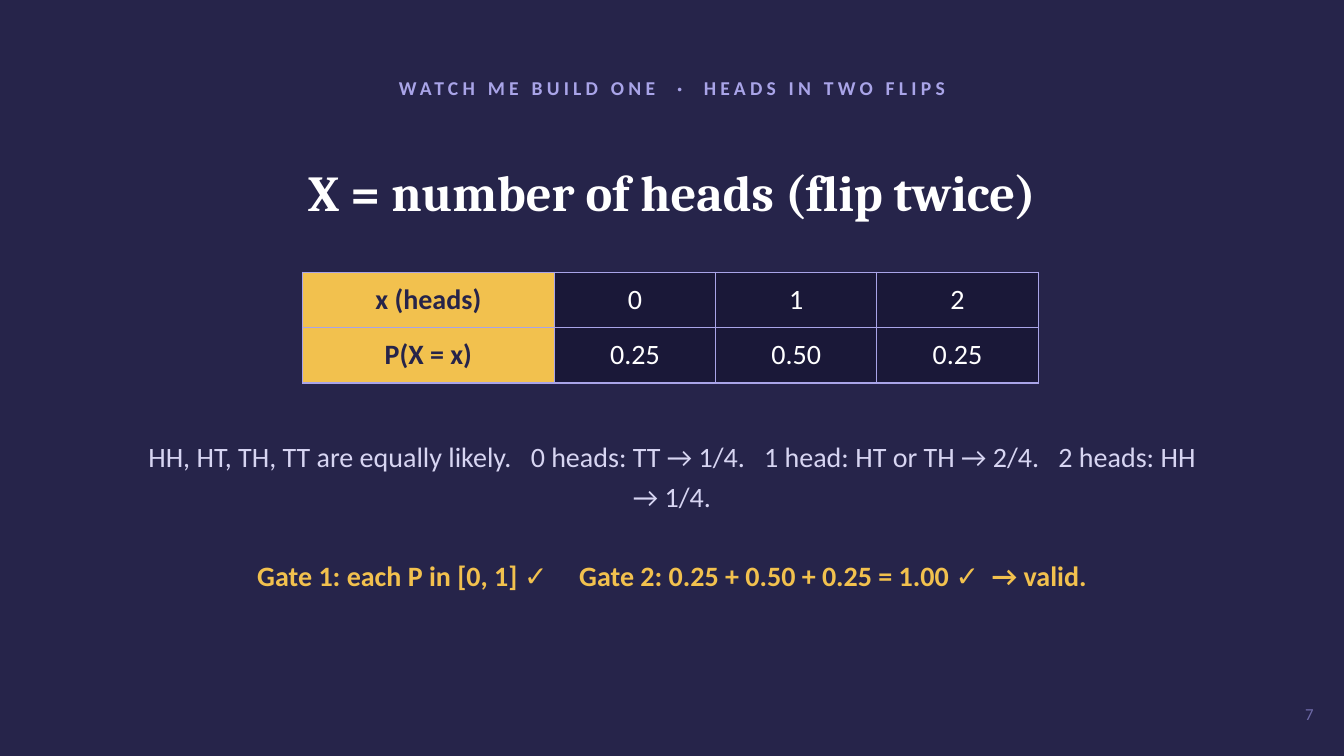
"""Build the slide that tabulates the number of heads in two coin flips."""
from dataclasses import dataclass

from lxml.etree import SubElement
from pptx import Presentation
from pptx.dml.color import RGBColor as RGB
from pptx.enum.text import MSO_ANCHOR as Anchor, PP_ALIGN as Align
from pptx.oxml.ns import qn
from pptx.util import Inches, Pt


@dataclass(frozen=True)
class Theme:
    """Colours, fonts and type sizes."""
    ground: str = "26244A"
    cell: str = "1A1838"
    lilac: str = "A9A4E8"
    pale: str = "D7D5F2"
    gold: str = "F2C14E"
    white: str = "FFFFFF"
    muted: str = "6E6AA8"
    sans: str = "Calibri"
    serif: str = "Cambria"
    title: int = 36
    body: int = 20
    kicker: int = 14
    small: int = 12


class Deck:
    """Draw elements on a grid of 40 columns by 30 rows."""

    def __init__(self, theme):
        """Open a deck of one blank slide."""
        self.t = theme
        self.prs = Presentation()
        self.prs.slide_width, self.prs.slide_height = Inches(13.333), Inches(7.5)
        self.s = self.prs.slides.add_slide(self.prs.slide_layouts[6])
        fill = self.s.background.fill
        fill.solid()
        fill.fore_color.rgb = RGB.from_string(theme.ground)

    def cols(self, n):
        """Return the width of n columns."""
        return round(self.prs.slide_width * n / 40)

    def rows(self, n):
        """Return the height of n rows."""
        return round(self.prs.slide_height * n / 30)

    def style(self, p, size, color, bold=False, font=None, align=Align.CENTER, spacing=0):
        """Format a paragraph and its runs."""
        p.alignment = align
        for r in p.runs:
            f = r.font
            f.size, f.bold, f.name = Pt(size), bold, font or self.t.sans
            f.color.rgb = RGB.from_string(color)
            if spacing:
                f._element.set("spc", str(round(spacing * 100)))

    def box(self, x, y, w, h, anchor=Anchor.MIDDLE):
        """Add an empty wrapping text box without margins."""
        shape = self.s.shapes.add_textbox(
            self.cols(x), self.rows(y), self.cols(w), self.rows(h))
        tf = shape.text_frame
        tf.word_wrap, tf.vertical_anchor = True, anchor
        tf.margin_left = tf.margin_right = tf.margin_top = tf.margin_bottom = 0
        return tf

    def text(self, place, words, size, color, **look):
        """Add a one-line text box."""
        tf = self.box(*place)
        tf.text = words
        self.style(tf.paragraphs[0], size, color, **look)
        return tf.paragraphs[0]

    def gapped(self, p, pieces, size, color, gaps, bold=False, spacing=0):
        """Write pieces parted by single spaces widened by the gaps in points."""
        for piece, gap in zip(pieces, [*gaps, None]):
            p.add_run().text = piece
            if gap is not None:
                p.add_run().text = " "
        self.style(p, size, color, bold, spacing=spacing)
        for r, gap in zip(p.runs[1::2], gaps):
            r.font._element.set("spc", str(round(gap * 100)))

    def table(self, x, y, data, widths, height):
        """Add a bordered table whose first column is highlighted."""
        tbl = self.s.shapes.add_table(
            len(data), len(widths), self.cols(x), self.rows(y),
            self.cols(sum(widths)), self.rows(height * len(data))).table
        tbl.first_row = tbl.horz_banding = False
        for col, width in zip(tbl.columns, widths):
            col.width = self.cols(width)
        for i, values in enumerate(data):
            tbl.rows[i].height = self.rows(height)
            for j, value in enumerate(values):
                self.cell(tbl.cell(i, j), value, head=j == 0)

    def cell(self, cell, value, head):
        """Fill, border and label one cell."""
        t = self.t
        cell.text, cell.vertical_anchor = value, Anchor.MIDDLE
        self.style(cell.text_frame.paragraphs[0], t.body,
                   t.ground if head else t.white, head)
        pr = cell._tc.get_or_add_tcPr()
        for side in ("a:lnL", "a:lnR", "a:lnT", "a:lnB"):
            ln = SubElement(pr, qn(side), w=str(Pt(1)))
            SubElement(SubElement(ln, qn("a:solidFill")), qn("a:srgbClr"), val=t.lilac)
        cell.fill.solid()
        cell.fill.fore_color.rgb = RGB.from_string(t.gold if head else t.cell)


def main():
    """Build and save the slide."""
    t = Theme()
    d = Deck(t)
    kicker = d.box(2.7, 2.48, 34.6, 2).paragraphs[0]
    d.gapped(kicker, ["WATCH ME BUILD ONE", "·", "HEADS IN TWO FLIPS"],
             t.kicker, t.lilac, [9.2, 9.2], bold=True, spacing=3)
    d.text((1.8, 5.6, 36.4, 4), "X = number of heads (flip twice)",
           t.title, t.white, bold=True, font=t.serif)
    d.table(9, 10.8, [["x (heads)", "0", "1", "2"],
                      ["P(X = x)", "0.25", "0.50", "0.25"]],
            [7.5, 4.8, 4.8, 4.8], 2.2)

    tf = d.box(4.2, 17.2, 31.6, 8, Anchor.TOP)
    reasons, gates = tf.paragraphs[0], tf.add_paragraph()
    d.gapped(reasons, ["HH, HT, TH, TT are equally likely.", "0 heads: TT → 1/4.",
                       "1 head: HT or TH → 2/4.", "2 heads: HH → 1/4."],
             t.body, t.pale, [9, 9, 9])
    d.gapped(gates, ["Gate 1: each P in [0, 1] ✓",
                     "Gate 2: 0.25 + 0.50 + 0.25 = 1.00 ✓", "→ valid."],
             t.body, t.gold, [18, 4.5], bold=True)
    reasons.line_spacing = gates.line_spacing = 1.18
    gates.space_before = Pt(28.5)

    d.text((37, 27.52, 2.1, 1.6), "7", t.small, t.muted, align=Align.RIGHT)
    d.prs.save("out.pptx")


if __name__ == "__main__":
    main()
